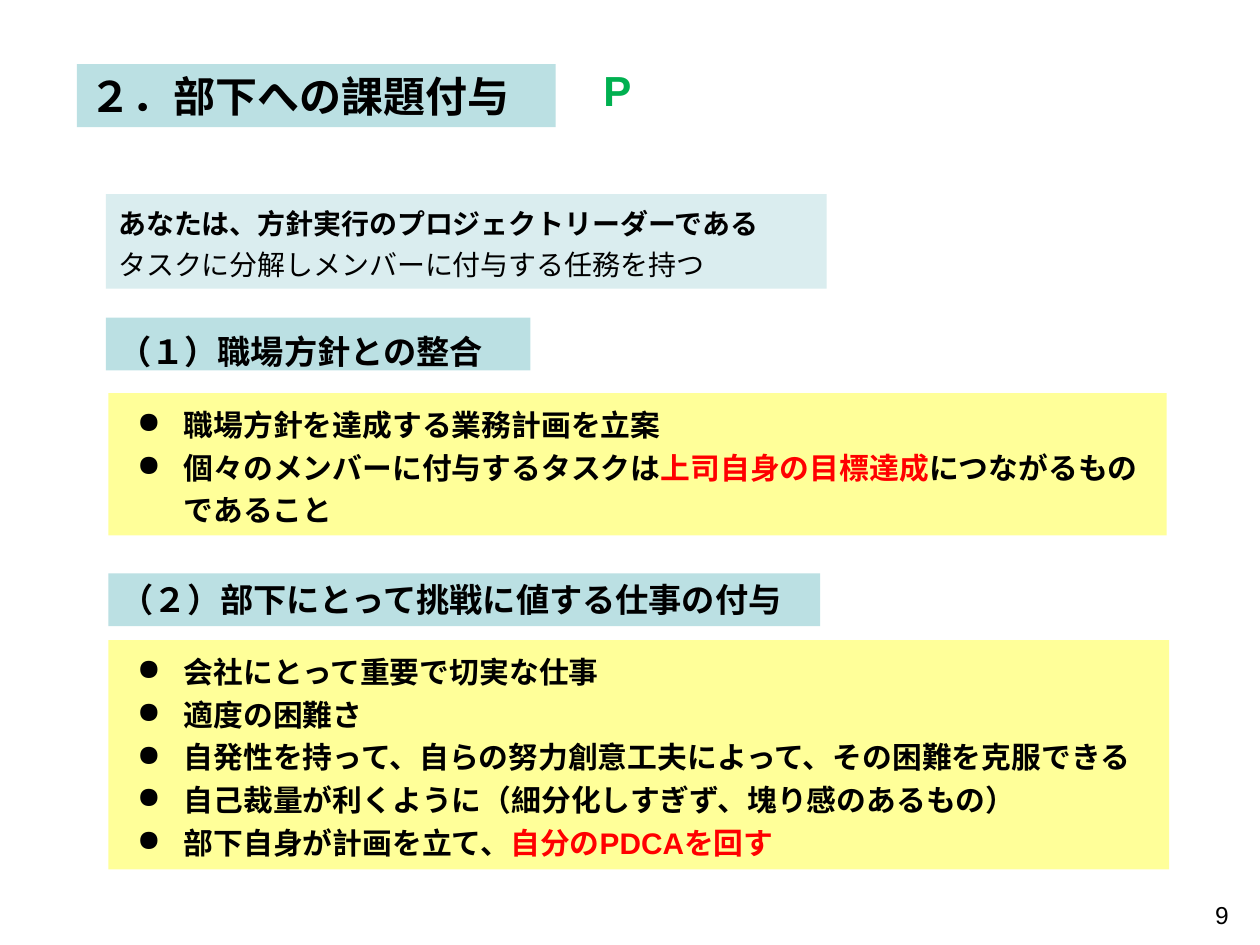
from lxml import etree
from pptx import Presentation
from pptx.dml.color import RGBColor
from pptx.enum.shapes import MSO_SHAPE
from pptx.enum.text import MSO_ANCHOR, MSO_AUTO_SIZE, PP_ALIGN
from pptx.oxml.ns import qn
from pptx.util import Inches, Pt

RECT = MSO_SHAPE.RECTANGLE
TOP = MSO_ANCHOR.TOP
GROW = MSO_AUTO_SIZE.SHAPE_TO_FIT_TEXT
LEFT, RIGHT = PP_ALIGN.LEFT, PP_ALIGN.RIGHT
HEX = {
    "black": "000000",
    "red": "FF0000",
    "green": "00B050",
    "teal": "BBE0E3",
    "pale": "DAEDEF",
    "yellow": "FFFF99",
}


def color(name):
    return RGBColor.from_string(HEX[name])


def add_bullet(para):
    props = para._p.get_or_add_pPr()
    props.set("marL", str(Inches(0.5)))
    props.set("indent", str(Inches(-0.37)))
    tint = etree.SubElement(props, qn("a:buClr"))
    etree.SubElement(tint, qn("a:srgbClr")).set("val", HEX["black"])
    etree.SubElement(props, qn("a:buChar")).set("char", "●")


prs = Presentation()
prs.slide_width, prs.slide_height = Inches(10), Inches(7.5)
slide = prs.slides.add_slide(prs.slide_layouts[6])

policy = [
    ["職場方針を達成する業務計画を立案"],
    ["個々のメンバーに付与するタスクは", "上司自身の目標達成", "につながるものであること"],
]
work = [
    ["会社にとって重要で切実な仕事　"],
    ["適度の困難さ"],
    ["自発性を持って、自らの努力創意工夫によって、その困難を克服できる"],
    ["自己裁量が利くように（細分化しすぎず、塊り感のあるもの）"],
    ["部下自身が計画を立て、", "自分のPDCAを回す"],
]
leader = [
    ["あなたは、方針実行のプロジェクトリーダーである"],
    ["タスクに分解しメンバーに付与する任務を持つ"],
]

boxes = [
    (0.61, 0.51, 3.8, 0.5, "teal", 24, 1, False, [["２．部下への課題付与"]]),
    (0.84, 1.54, 5.72, 0.75, "pale", 16, 1.2, False, leader),
    (0.84, 2.52, 3.37, 0.42, "teal", 19, 1.2, False, [["（１）職場方針との整合"]]),
    (0.86, 3.12, 8.4, 1.13, "yellow", 17, 1.2, True, policy),
    (0.86, 4.55, 5.65, 0.42, "teal", 19, 1, False, [["（２）部下にとって挑戦に値する仕事の付与"]]),
    (0.86, 5.08, 8.42, 1.82, "yellow", 17, 1.2, True, work),
]

for x, y, w, h, fill, size, space, bullet, lines in boxes:
    box = slide.shapes.add_shape(RECT, Inches(x), Inches(y), Inches(w), Inches(h))
    box.shadow.inherit = False
    box.fill.solid()
    box.fill.fore_color.rgb = color(fill)
    box.line.fill.background()
    frame = box.text_frame
    frame.word_wrap = True
    frame.auto_size = GROW
    frame.vertical_anchor = TOP
    for i, parts in enumerate(lines):
        para = frame.paragraphs[0] if i == 0 else frame.add_paragraph()
        para.alignment = LEFT
        para.line_spacing = float(space)
        if bullet:
            add_bullet(para)
        for j, part in enumerate(parts):
            run = para.add_run()
            run.text = part
            run.font.name = "Arial"
            run.font.size = Pt(size)
            run.font.bold = not (lines is leader and i == 1)
            run.font.color.rgb = color("red" if j == 1 else "black")

labels = [
    (4.69, 0.46, 0.63, 0.5, "P", 24, True, "green", LEFT, 0.05),
    (7.52, 7.06, 2.33, 0.29, "9", 14, False, "black", RIGHT, 0.08),
]
for x, y, w, h, text, size, bold, tint, align, inset in labels:
    box = slide.shapes.add_textbox(Inches(x), Inches(y), Inches(w), Inches(h))
    frame = box.text_frame
    frame.word_wrap = True
    frame.margin_top = Inches(inset)
    frame.margin_bottom = Inches(0)
    frame.text = text
    para = frame.paragraphs[0]
    para.alignment = align
    font = para.runs[0].font
    font.name = "Arial"
    font.size = Pt(size)
    font.bold = bold
    font.color.rgb = color(tint)

prs.save("out.pptx")
